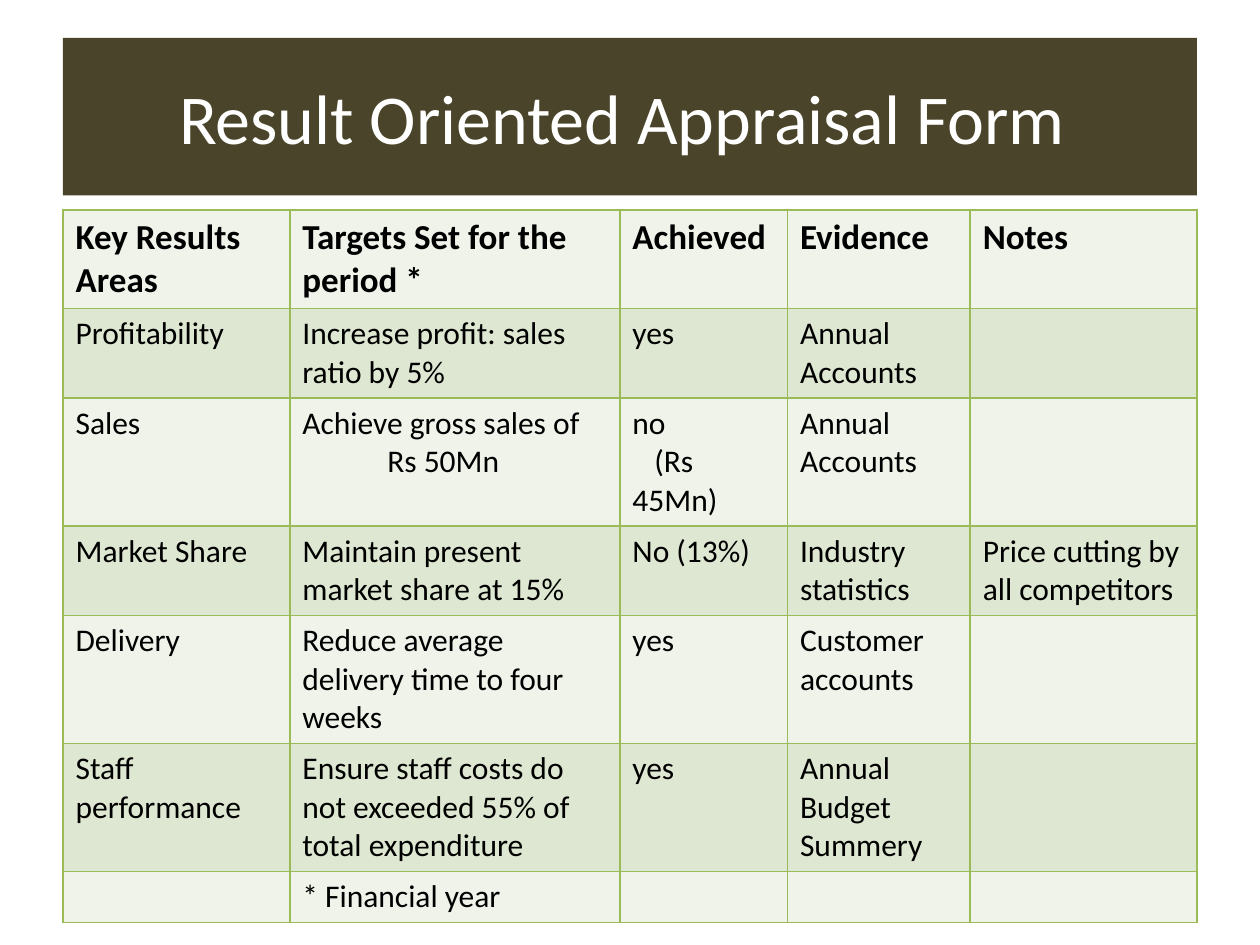
from lxml.etree import SubElement
from pptx import Presentation
from pptx.dml.color import RGBColor
from pptx.enum.shapes import MSO_SHAPE as Shape
from pptx.enum.text import MSO_ANCHOR as Anchor, PP_ALIGN as Align
from pptx.oxml.ns import qn
from pptx.util import Pt

LEFT, WIDTH = 36, 648
COLUMN_WIDTHS = [129.6, 188.64, 95.76, 104.4, 129.6]
ROW_HEIGHTS = [56, 51, 73, 51, 73, 73, 29]

# A list in a cell holds paragraphs; a pair is (text, first-line indent)
HEADINGS = ["Key Results Areas", "Targets Set for the period *",
            "Achieved", "Evidence", "Notes"]
RESULTS = [
    ["Profitability", "Increase profit: sales ratio by 5%", "yes",
     "Annual Accounts", ""],
    ["Sales", ["Achieve gross sales of", ("Rs 50Mn", 48.5)],
     ["no", ("(Rs 45Mn)", 12.5)], "Annual Accounts", ""],
    ["Market Share", "Maintain present market share at 15%", "No (13%)",
     "Industry statistics", "Price cutting by all competitors"],
    ["Delivery", "Reduce average delivery time to four weeks", "yes",
     "Customer accounts", ""],
    ["Staff performance",
     "Ensure staff costs do not exceeded 55% of total expenditure", "yes",
     "Annual Budget Summery", ""],
    ["", "* Financial year", "", "", ""],
]


def color(hex_code):
    return RGBColor.from_string(hex_code)


def paint(target, hex_code):
    target.fill.solid()
    target.fill.fore_color.rgb = color(hex_code)


def write(paragraph, text, font="Calibri", size=18, ink="000000",
          bold=False, align=Align.LEFT, indent=0):
    paragraph.alignment = align
    if indent:
        paragraph._p.get_or_add_pPr().set("indent", str(Pt(indent)))
    style = paragraph.font
    if text:
        run = paragraph.add_run()
        run.text = text
        style = run.font
    style.name, style.size, style.bold = font, Pt(size), bold
    style.color.rgb = color(ink)


class FormSlide:
    banner_fill = "4A452A"
    banner_ink = "FFFFFF"
    bands = ("EFF3EA", "DEE7D1")
    border = "9BBB59"

    def __init__(self, slide):
        self.slide = slide

    def banner(self, text, top, height):
        banner = self.slide.shapes.add_shape(
            Shape.RECTANGLE, Pt(LEFT), Pt(top), Pt(WIDTH), Pt(height))
        banner.shadow.inherit = False
        paint(banner, self.banner_fill)
        banner.line.fill.background()
        frame = banner.text_frame
        frame.word_wrap = True
        frame.vertical_anchor = Anchor.MIDDLE
        write(frame.paragraphs[0], text, size=40, ink=self.banner_ink,
              align=Align.CENTER)

    def outline(self, cell):
        properties = cell._tc.get_or_add_tcPr()
        for side in ("a:lnL", "a:lnR", "a:lnT", "a:lnB"):
            line = SubElement(properties, qn(side), w=str(Pt(1)))
            fill = SubElement(line, qn("a:solidFill"))
            SubElement(fill, qn("a:srgbClr"), val=self.border)

    def fill_cell(self, cell, content, band, **style):
        self.outline(cell)
        paint(cell, band)
        frame = cell.text_frame
        parts = content if isinstance(content, list) else [content]
        for number, part in enumerate(parts):
            text, indent = part if isinstance(part, tuple) else (part, 0)
            paragraph = frame.add_paragraph() if number else frame.paragraphs[0]
            write(paragraph, text, indent=indent, **style)

    def table(self, rows, top):
        table = self.slide.shapes.add_table(
            len(rows), len(COLUMN_WIDTHS), Pt(LEFT), Pt(top),
            Pt(WIDTH), Pt(sum(ROW_HEIGHTS))).table
        for column, width in zip(table.columns, COLUMN_WIDTHS):
            column.width = Pt(width)
        for index, (row, height) in enumerate(zip(table.rows, ROW_HEIGHTS)):
            row.height = Pt(height)
            heading = index == 0
            for cell, content in zip(row.cells, rows[index]):
                self.fill_cell(cell, content, self.bands[index % 2],
                               size=20 if heading else 18, bold=heading)


def main():
    deck = Presentation()
    deck.slide_width, deck.slide_height = Pt(720), Pt(540)
    form = FormSlide(deck.slides.add_slide(deck.slide_layouts[6]))

    # Title banner
    form.banner("Result Oriented Appraisal Form ", top=21.6, height=90)

    # Appraisal table
    form.table([HEADINGS] + RESULTS, top=120)

    deck.save("out.pptx")


if __name__ == "__main__":
    main()
